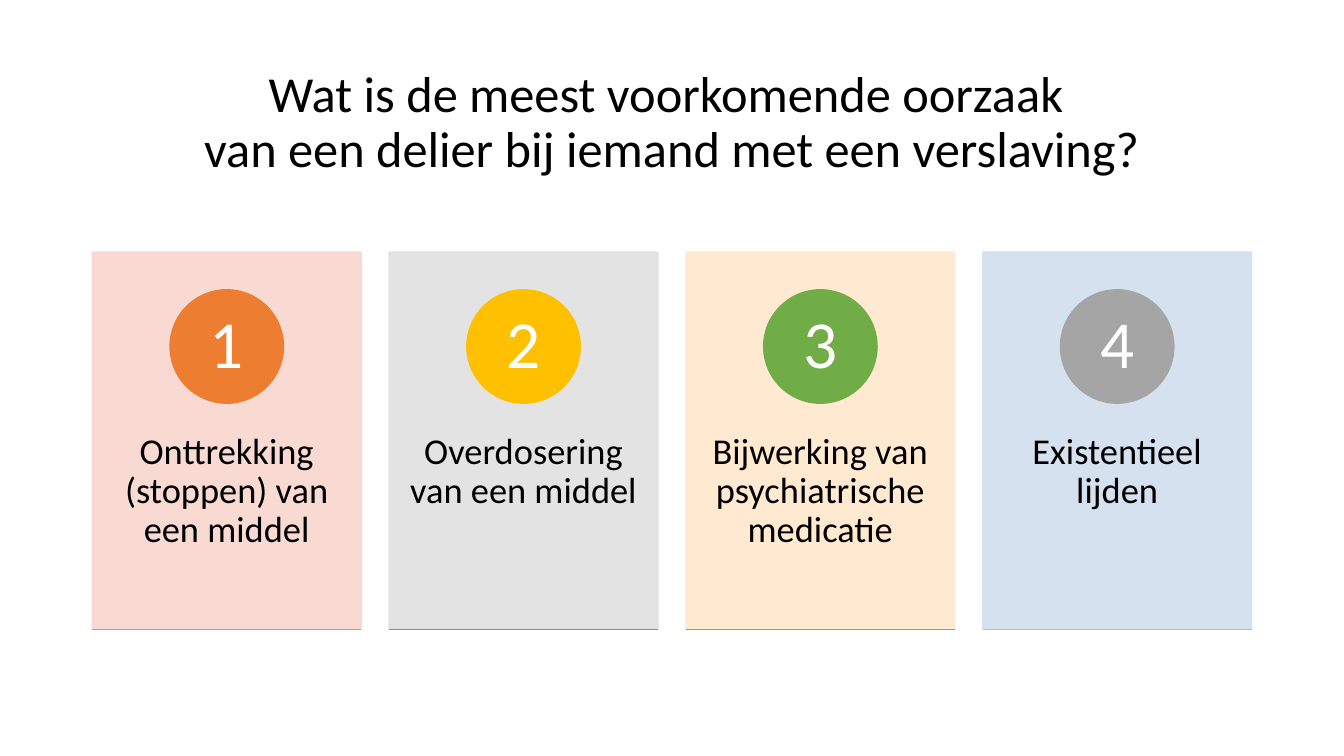
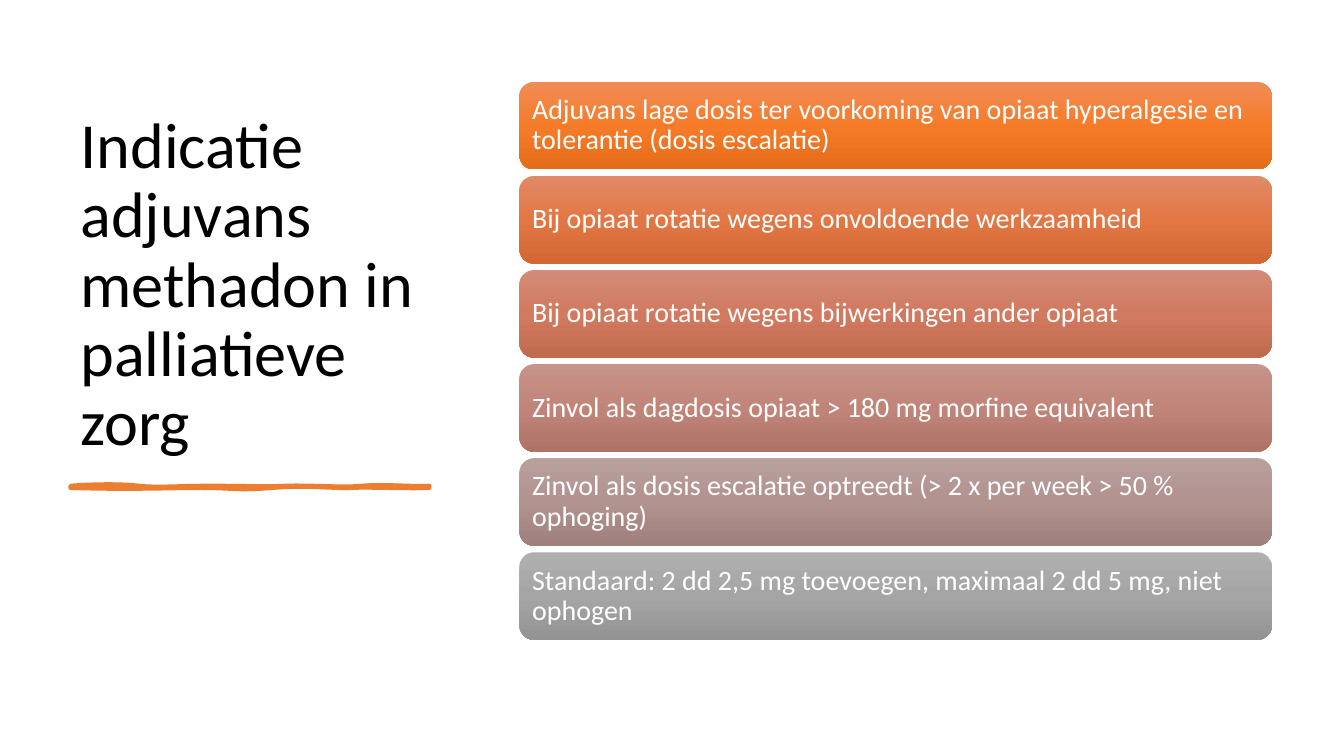
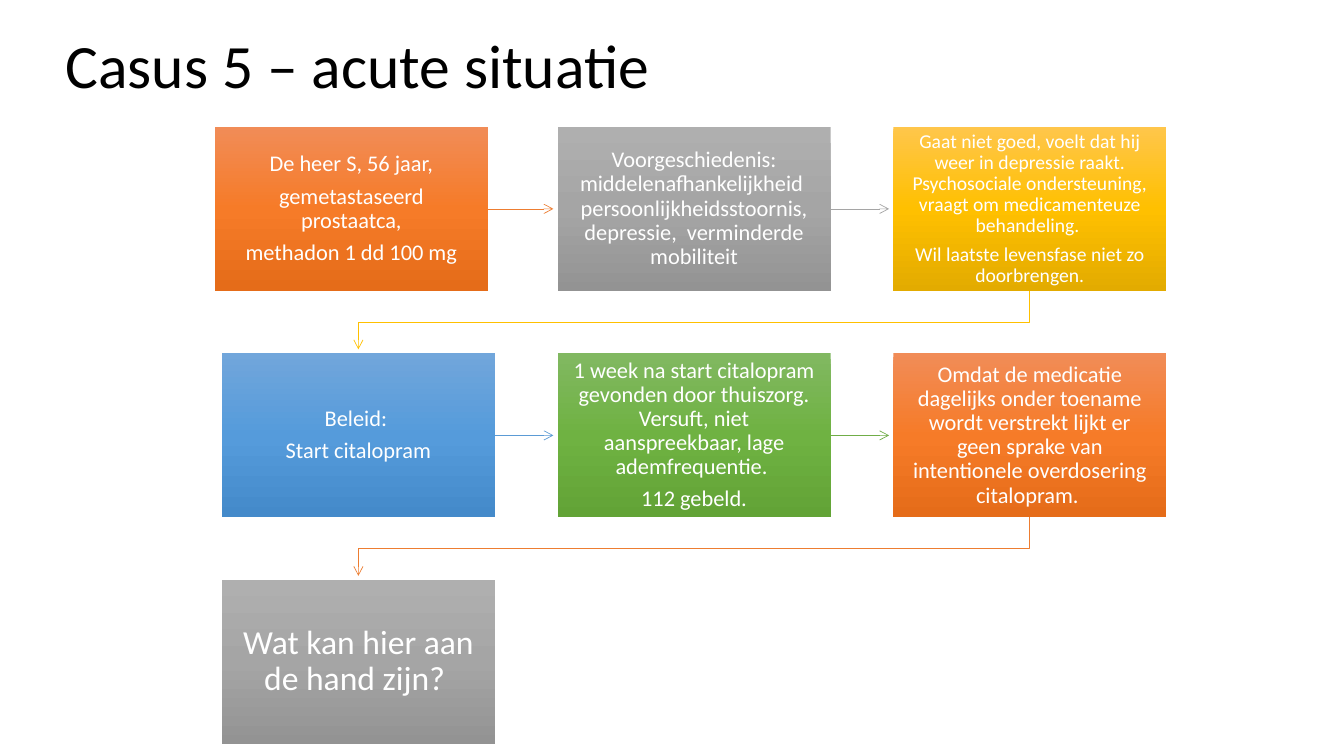
from copy import deepcopy
from dataclasses import dataclass
from typing import Any

from lxml.etree import SubElement
from pptx import Presentation
from pptx.dml.color import RGBColor
from pptx.enum.shapes import MSO_CONNECTOR, MSO_SHAPE
from pptx.enum.text import MSO_ANCHOR, PP_ALIGN
from pptx.oxml.ns import qn
from pptx.util import Pt


# Theme: colours, font and type sizes
@dataclass(frozen=True)
class Theme:
    font: str = "Calibri"
    black: str = "000000"
    white: str = "FFFFFF"
    orange: str = "ED7D31"
    grey: str = "A5A5A5"
    yellow: str = "FFC000"
    blue: str = "5B9BD5"
    green: str = "70AD47"
    question_size: float = 36
    side_title_size: float = 45.9
    title_size: float = 44
    number_size: float = 48
    card_size: float = 26
    bar_size: float = 20
    step_size: float = 16
    small_step_size: float = 14
    large_step_size: float = 24
    line_spacing: float = 0.9
    space_after: float = 0.35


THEME = Theme()

# Top, middle and bottom colour of each gradient
ORANGE_FADE = ("F18C57", "F67B28", "E56C19")
GREY_FADE = ("AFAFAF", "A5A5A5", "939393")
YELLOW_FADE = ("FFC64B", "FFC000", "E3AB00")
BLUE_FADE = ("71A6DB", "559BDB", "448ACA")
GREEN_FADE = ("81B861", "6FB242", "62A336")


@dataclass(frozen=True)
class Box:
    left: float
    top: float
    width: float
    height: float

    @property
    def right(self) -> float:
        return self.left + self.width

    @property
    def bottom(self) -> float:
        return self.top + self.height

    @property
    def center(self) -> float:
        return self.left + self.width / 2

    @property
    def middle(self) -> float:
        return self.top + self.height / 2

    def lengths(self) -> list[int]:
        return [Pt(n) for n in (self.left, self.top, self.width, self.height)]


@dataclass(frozen=True)
class Card:
    text: str
    fill: str
    circle: str
    rule: str


@dataclass(frozen=True)
class Bar:
    text: str
    fade: tuple[str, str, str]


@dataclass(frozen=True)
class Step:
    paragraphs: tuple[str, ...]
    fade: tuple[str, str, str]
    arrow: str = ""
    size: float = THEME.step_size
    shift: float = 0


# Shared drawing functions
def set_format(target: Any, values: dict[str, Any]) -> None:
    for name, value in values.items():
        setattr(target, name, value)


def write(shape: Any, paragraphs: tuple[str, ...], size: float, color: str,
          align: PP_ALIGN = PP_ALIGN.CENTER,
          anchor: MSO_ANCHOR = MSO_ANCHOR.MIDDLE,
          inset: tuple[float, float] = (7.2, 3.6)) -> None:
    frame = shape.text_frame
    across, down = Pt(inset[0]), Pt(inset[1])
    set_format(frame, {
        "word_wrap": True, "vertical_anchor": anchor,
        "margin_left": across, "margin_right": across,
        "margin_top": down, "margin_bottom": down,
    })
    for index, text in enumerate(paragraphs):
        para = frame.add_paragraph() if index else frame.paragraphs[0]
        para.text = text
        set_format(para, {
            "alignment": align, "line_spacing": THEME.line_spacing,
            "space_after": Pt(size * THEME.space_after),
        })
        for span in para.runs:
            set_format(span.font, {"name": THEME.font, "size": Pt(size)})
            span.font.color.rgb = RGBColor.from_string(color)


def add_text(page: Any, box: Box, text: str, size: float, **layout: Any) -> None:
    shape = page.shapes.add_textbox(*box.lengths())
    write(shape, (text,), size, THEME.black, **layout)


def stroke(shape: Any, color: str, width: float) -> None:
    shape.line.color.rgb = RGBColor.from_string(color)
    shape.line.width = Pt(width)


def add_solid(page: Any, kind: MSO_SHAPE, box: Box, color: str) -> Any:
    shape = page.shapes.add_shape(kind, *box.lengths())
    shape.shadow.inherit = False
    shape.fill.solid()
    shape.fill.fore_color.rgb = RGBColor.from_string(color)
    stroke(shape, color, 1)
    return shape


def add_fade(page: Any, kind: MSO_SHAPE, box: Box, fade: tuple[str, str, str]) -> Any:
    shape = page.shapes.add_shape(kind, *box.lengths())
    shape.shadow.inherit = False
    shape.line.fill.background()
    shape.fill.gradient()
    shape.fill.gradient_angle = 270
    stop_list = next(shape._element.spPr.iter(qn("a:gsLst")))
    stop_list.append(deepcopy(stop_list[0]))
    for stop, color, position in zip(shape.fill.gradient_stops, fade, (0, 0.5, 1)):
        stop.color.rgb = RGBColor.from_string(color)
        stop.position = position
    return shape


def add_line(page: Any, start: tuple[float, float], end: tuple[float, float],
             color: str, width: float) -> Any:
    line = page.shapes.add_connector(
        MSO_CONNECTOR.STRAIGHT, *[Pt(n) for n in (*start, *end)])
    stroke(line, color, width)
    SubElement(line._element.spPr, qn("a:effectLst"))
    return line


def add_outline(page: Any, points: list[tuple[float, float]], color: str,
                width: float, closed: bool) -> Any:
    start, *others = [(Pt(x), Pt(y)) for x, y in points]
    builder = page.shapes.build_freeform(*start)
    builder.add_line_segments(others, close=closed)
    shape = builder.convert_to_shape()
    shape.shadow.inherit = False
    stroke(shape, color, width)
    if closed:
        shape.fill.solid()
        shape.fill.fore_color.rgb = RGBColor.from_string(color)
    else:
        shape.fill.background()
    return shape


def add_arrowhead(shape: Any) -> None:
    SubElement(shape.line._get_or_add_ln(), qn("a:tailEnd"), type="arrow")


def make_transparent(shape: Any, percent: int) -> None:
    for color in list(shape._element.spPr.iter(qn("a:srgbClr"))):
        SubElement(color, qn("a:alpha"), val=str(percent * 1000))


# Slide 1: question with four numbered answers
CARDS = (
    Card("Onttrekking (stoppen) van een middel", "F8D7CE", THEME.orange, THEME.grey),
    Card("Overdosering van een middel ", "E1E1E1", THEME.yellow, THEME.blue),
    Card("Bijwerking van psychiatrische medicatie", "FFE8CC", THEME.green, THEME.orange),
    Card("Existentieel lijden", "D2DEEF", THEME.grey, THEME.yellow),
)


def add_card(page: Any, card: Card, number: int, box: Box) -> None:
    panel = add_solid(page, MSO_SHAPE.RECTANGLE, box, card.fill)
    make_transparent(panel, 90)
    add_text(page, Box(box.left, 283, box.width, 162), card.text, THEME.card_size,
             anchor=MSO_ANCHOR.TOP, inset=(15, 26))
    diameter = 81
    circle = add_solid(page, MSO_SHAPE.OVAL, Box(
        box.center - diameter / 2, box.top + 27, diameter, diameter), card.circle)
    write(circle, (str(number),), THEME.number_size, THEME.white, inset=(6.5, 0.7))
    add_line(page, (box.left, box.bottom), (box.right, box.bottom), card.rule, 1)


def draw_question(page: Any) -> None:
    add_text(page, Box(66, 44, 828, 89),
             "Wat is de meest voorkomende oorzaak \n"
             "van een delier bij iemand met een verslaving?", THEME.question_size)
    width, gap = 192, 20
    for index, card in enumerate(CARDS):
        add_card(page, card, index + 1,
                 Box(66 + index * (width + gap), 180, width, 269.5))


# Slide 2: indications as a stack of bars
BARS = (
    Bar("Adjuvans lage dosis ter voorkoming van opiaat hyperalgesie en tolerantie "
        "(dosis escalatie)", ORANGE_FADE),
    Bar("Bij opiaat rotatie wegens onvoldoende werkzaamheid",
        ("E18A66", "E37744", "D26734")),
    Bar("Bij opiaat rotatie wegens bijwerkingen ander opiaat",
        ("D28C78", "D17A5F", "C06A4E")),
    Bar("Zinvol als dagdosis opiaat > 180 mg morfine equivalent",
        ("C5948B", "C18478", "AF7267")),
    Bar("Zinvol als dosis escalatie optreedt (> 2 x per week > 50 % ophoging)",
        ("B9A09D", "B2928F", "A0807D")),
    Bar("Standaard: 2 dd 2,5 mg toevoegen, maximaal 2 dd 5 mg, niet ophogen", GREY_FADE),
)

# Hand-drawn underline: two control points and an end point per curve
UNDERLINE_START = (50.4, 347)
UNDERLINE_CURVES = (
    ((69.8, 345.6), (87.1, 345.6), (99.4, 347)),
    ((111.6, 348.5), (127.4, 347), (150.5, 347)),
    ((173.5, 347), (187.2, 347.8), (204.5, 347)),
    ((221.8, 346.3), (244.1, 348.5), (258.5, 347)),
    ((272.9, 345.6), (296.6, 347.8), (306.7, 347)),
    ((306.7, 347.8), (306.7, 348.5), (306.7, 348.5)),
    ((293.8, 349.2), (262.1, 347.8), (250.6, 348.5)),
    ((239, 349.2), (218.9, 346.3), (194.4, 348.5)),
    ((169.2, 350.6), (166.3, 348.5), (143.3, 348.5)),
    ((119.5, 348.5), (95, 349.9), (50.4, 348.5)),
)


def trace_curves(start: tuple[float, float], curves: tuple, pieces: int = 8
                 ) -> list[tuple[float, float]]:
    points = [start]
    for curve in curves:
        corners = (points[-1], *curve)
        for piece in range(1, pieces + 1):
            t = piece / pieces
            weights = ((1 - t) ** 3, 3 * t * (1 - t) ** 2, 3 * t ** 2 * (1 - t), t ** 3)
            points.append((sum(w * x for w, (x, _) in zip(weights, corners)),
                           sum(w * y for w, (_, y) in zip(weights, corners))))
    return points


def draw_indications(page: Any) -> None:
    add_text(page, Box(50.4, 50.4, 281.5, 281.5),
             "Indicatie\nadjuvans methadon in palliatieve zorg",
             THEME.side_title_size, align=PP_ALIGN.LEFT, anchor=MSO_ANCHOR.BOTTOM)
    add_outline(page, trace_curves(UNDERLINE_START, UNDERLINE_CURVES),
                THEME.orange, 3, closed=True)
    for index, bar in enumerate(BARS):
        box = Box(371, 58.5 + index * 67.2, 537.6, 62.6)
        shape = add_fade(page, MSO_SHAPE.ROUNDED_RECTANGLE, box, bar.fade)
        write(shape, (bar.text,), THEME.bar_size, THEME.white,
              align=PP_ALIGN.LEFT, inset=(6, 6))


# Slide 3: case as a flow of steps, three to a row
STEPS = (
    Step(("De heer S, 56 jaar,", "gemetastaseerd prostaatca,", "methadon 1 dd 100 mg"),
         ORANGE_FADE, THEME.orange, shift=-5),
    Step(("Voorgeschiedenis: middelenafhankelijkheid  persoonlijkheidsstoornis, "
          "depressie,  verminderde mobiliteit",), GREY_FADE, THEME.grey),
    Step(("Gaat niet goed, voelt dat hij weer in depressie raakt. Psychosociale "
          "ondersteuning, vraagt om medicamenteuze behandeling. ",
          "Wil laatste levensfase niet zo doorbrengen."),
         YELLOW_FADE, THEME.yellow, THEME.small_step_size),
    Step(("Beleid: ", "Start citalopram"), BLUE_FADE, THEME.blue),
    Step(("1 week na start citalopram gevonden door thuiszorg. Versuft, niet "
          "aanspreekbaar, lage ademfrequentie. ", "112 gebeld."),
         GREEN_FADE, THEME.green),
    Step(("Omdat de medicatie dagelijks onder toename wordt verstrekt lijkt er geen "
          "sprake van intentionele overdosering citalopram. ",),
         ORANGE_FADE, THEME.orange),
    Step(("Wat kan hier aan de hand zijn? ",), GREY_FADE, size=THEME.large_step_size),
)
COLUMNS = 3


def step_box(index: int) -> Box:
    row, column = divmod(index, COLUMNS)
    return Box(158.5 + column * 239.8, 90.7 + row * 161.8, 195, 117)


def add_step_arrow(page: Any, box: Box, target: Box, color: str) -> None:
    clearance = 3
    if target.top == box.top:
        arrow = add_line(page, (box.right, box.middle),
                         (target.left - clearance, box.middle), color, 0.5)
    else:
        turn = (box.bottom + target.top) / 2
        arrow = add_outline(page, [
            (box.center, box.bottom), (box.center, turn), (target.center, turn),
            (target.center, target.top - clearance)], color, 0.5, closed=False)
    add_arrowhead(arrow)


def draw_case(page: Any) -> None:
    add_text(page, Box(39.6, 8.6, 447, 81.4), "Casus 5 – acute situatie",
             THEME.title_size, align=PP_ALIGN.LEFT)
    for index, step in enumerate(STEPS):
        grid = step_box(index)
        box = Box(grid.left + step.shift, grid.top, grid.width, grid.height)
        if step.arrow:
            add_step_arrow(page, box, step_box(index + 1), step.arrow)
        shape = add_fade(page, MSO_SHAPE.RECTANGLE, box, step.fade)
        write(shape, step.paragraphs, step.size, THEME.white, inset=(9.5, 10))


def main() -> None:
    deck = Presentation()
    set_format(deck, {"slide_width": Pt(960), "slide_height": Pt(540)})
    blank = deck.slide_layouts[6]
    for draw in (draw_question, draw_indications, draw_case):
        draw(deck.slides.add_slide(blank))
    deck.save("out.pptx")


if __name__ == "__main__":
    main()
